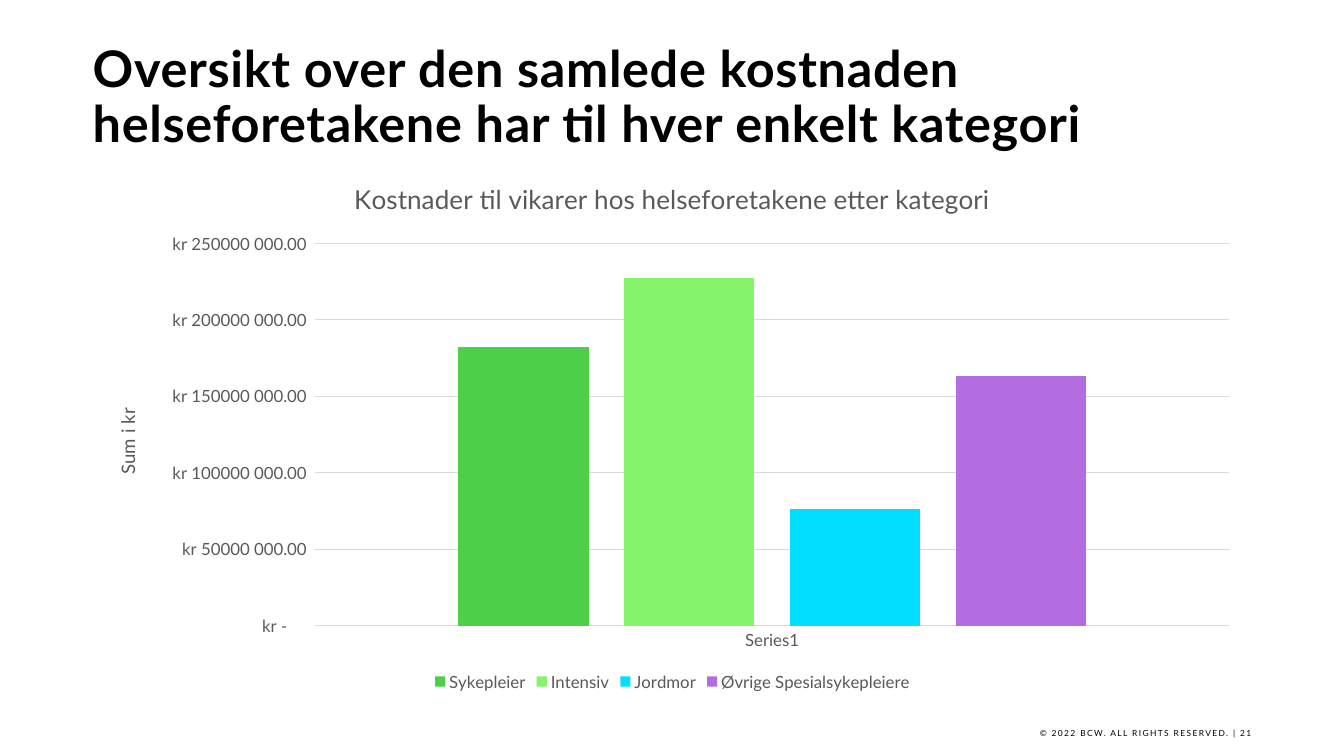
from pptx import Presentation
from pptx.chart.data import CategoryChartData
from pptx.dml.color import RGBColor
from pptx.enum.chart import XL_CHART_TYPE as Kind, XL_LEGEND_POSITION as Spot, XL_TICK_MARK as Tick
from pptx.enum.text import MSO_ANCHOR as Anchor, PP_ALIGN as Align
from pptx.util import Inches, Pt

FACE = "Lato"
HUES = {
    "black": "000000",
    "gray": "595959",
    "grid": "D9D9D9",
    "Sykepleier": "4ECF49",
    "Intensiv": "85F46A",
    "Jordmor": "01DEFF",
    "Øvrige Spesialsykepleiere": "B36CE2",
}
COSTS = {
    "Sykepleier": 182000000,
    "Intensiv": 227000000,
    "Jordmor": 76000000,
    "Øvrige Spesialsykepleiere": 163000000,
}
MONEY = (
    '_-"kr"\\ * #\\ ##0.00_-;\\-"kr"\\ * #\\ ##0.00_-;'
    '_-"kr"\\ * "-"??_-;_-@_-'
)


def style(font, size, hue, bold=False):
    font.name = FACE
    font.size = Pt(size)
    font.bold = bold
    font.color.rgb = RGBColor.from_string(HUES[hue])


def write(box, text, size, space, anchor, left, bold=False):
    frame = box.text_frame
    frame.word_wrap = True
    frame.vertical_anchor = anchor
    frame.margin_left = Inches(left)
    frame.margin_right = 0
    para = frame.paragraphs[0]
    run = para.add_run()
    run.text = text
    style(run.font, size, "black", bold)
    run.font._element.set("spc", str(space))
    return para


deck = Presentation()
deck.slide_width = Inches(13.33)
deck.slide_height = Inches(7.5)
slide = deck.slides.add_slide(deck.slide_layouts[6])

foot = slide.shapes.add_textbox(Inches(8.82), Inches(7.17), Inches(3.59), Inches(0.21))
line = write(foot, "© 2022 BCW. ALL RIGHTS RESERVED. | 21", 6, 100, Anchor.MIDDLE, 0.1)
line.alignment = Align.RIGHT

head = slide.shapes.add_textbox(Inches(0.92), Inches(0.44), Inches(11.5), Inches(1.13))
line = write(
    head,
    "Oversikt over den samlede kostnaden helseforetakene har til hver enkelt kategori",
    36, 50, Anchor.BOTTOM, 0, True,
)
line.line_spacing = 0.9

data = CategoryChartData(number_format=MONEY)
data.categories = ["Series1"]
for name, cost in COSTS.items():
    data.add_series(name, [cost])
chart = slide.shapes.add_chart(
    Kind.COLUMN_CLUSTERED, Inches(0.92), Inches(1.58), Inches(11.5), Inches(5.32), data
).chart
style(chart.font, 10, "black")

costs = chart.value_axis
for owner, text, size in (
    (chart, "Kostnader til vikarer hos helseforetakene etter kategori", 18.6),
    (costs, "Sum i kr", 13.3),
):
    owner.has_title = True
    title = owner.chart_title if owner is chart else owner.axis_title
    run = title.text_frame.paragraphs[0].add_run()
    run.text = text
    style(run.font, size, "gray")
chart.chart_title.include_in_layout = False

for axis in (chart.category_axis, costs):
    axis.major_tick_mark = Tick.NONE
    axis.minor_tick_mark = Tick.NONE
    style(axis.tick_labels.font, 12, "gray")
costs.minimum_scale = 0
costs.maximum_scale = 250000000
costs.major_unit = 50000000
costs.tick_labels.number_format = MONEY
costs.tick_labels.number_format_is_linked = False
costs.format.line.fill.background()
costs.has_major_gridlines = True
for rule in (chart.category_axis.format.line, costs.major_gridlines.format.line):
    rule.color.rgb = RGBColor.from_string(HUES["grid"])
    rule.width = Pt(0.75)

chart.has_legend = True
chart.legend.position = Spot.BOTTOM
chart.legend.include_in_layout = False
style(chart.legend.font, 12, "gray")

plot = chart.plots[0]
plot.vary_by_categories = False
plot.gap_width = 219
plot.overlap = -27
for bar in plot.series:
    bar.invert_if_negative = False
    bar.format.fill.solid()
    bar.format.fill.fore_color.rgb = RGBColor.from_string(HUES[bar.name])

deck.save("out.pptx")
